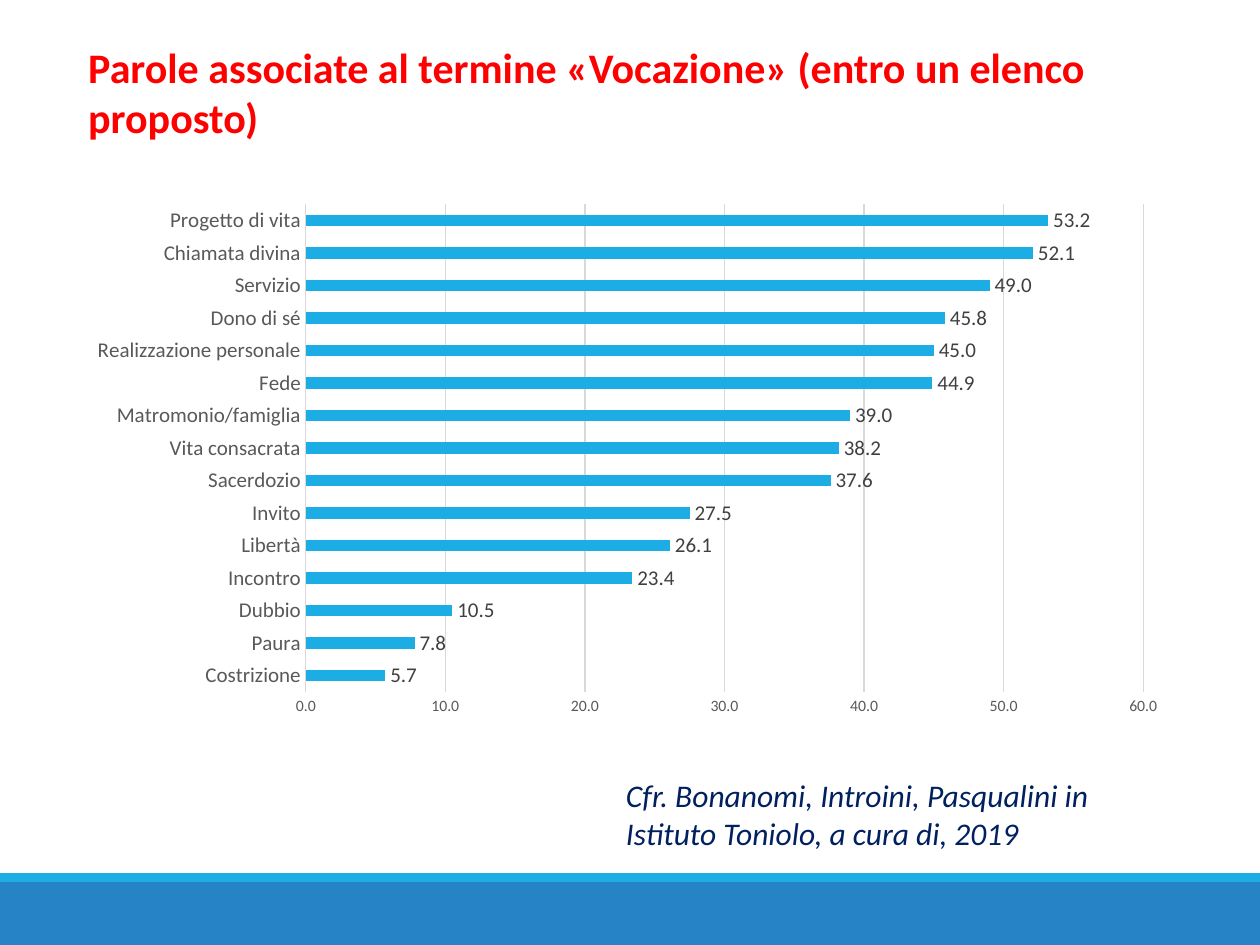
from dataclasses import dataclass

from lxml.etree import SubElement
from pptx import Presentation
from pptx.chart.data import CategoryChartData
from pptx.dml.color import RGBColor
from pptx.enum.chart import XL_CHART_TYPE, XL_LABEL_POSITION, XL_TICK_MARK
from pptx.enum.shapes import MSO_SHAPE
from pptx.enum.text import MSO_ANCHOR, PP_ALIGN
from pptx.oxml.ns import qn
from pptx.util import Inches, Pt

WIDTH, HEIGHT = 10, 7.5


@dataclass(frozen=True)
class Theme:
    font: str = "Calibri"
    title: str = "FF0000"
    citation: str = "002060"
    band: str = "2683C6"
    accent: str = "1CADE4"
    grid: str = "D9D9D9"
    axis_text: str = "595959"
    label_text: str = "404040"
    background: str = "FFFFFF"
    title_size: int = 24
    citation_size: int = 18
    label_size: int = 12
    scale_size: int = 9


THEME = Theme()

# Share of respondents choosing each word, in percent, bottom to top
WORDS = {
    "Costrizione": 5.7,
    "Paura": 7.8,
    "Dubbio": 10.5,
    "Incontro": 23.4,
    "Libertà": 26.1,
    "Invito": 27.5,
    "Sacerdozio": 37.6,
    "Vita consacrata": 38.2,
    "Matromonio/famiglia": 39.0,
    "Fede": 44.9,
    "Realizzazione personale": 45.0,
    "Dono di sé": 45.8,
    "Servizio": 49.0,
    "Chiamata divina": 52.1,
    "Progetto di vita": 53.2,
}


def box(left, top, width, height):
    """Turn shares of the slide's size into lengths."""
    return (Inches(left * WIDTH), Inches(top * HEIGHT),
            Inches(width * WIDTH), Inches(height * HEIGHT))


def rgb(value):
    return RGBColor.from_string(value)


def style_font(font, size, color, bold=False, italic=False):
    font.name = THEME.font
    font.size = Pt(size)
    font.color.rgb = rgb(color)
    font.bold = bold
    font.italic = italic


def write(holder, text, **font_format):
    frame = holder.text_frame
    frame.word_wrap = True
    frame.vertical_anchor = MSO_ANCHOR.TOP
    paragraph = frame.paragraphs[0]
    paragraph.alignment = PP_ALIGN.LEFT
    paragraph.line_spacing = 1.0
    run = paragraph.add_run()
    run.text = text
    style_font(run.font, **font_format)


def add_band(slide, top, height, color):
    band = slide.shapes.add_shape(MSO_SHAPE.RECTANGLE, *box(0, top, 1, height))
    band.shadow.inherit = False
    band.fill.solid()
    band.fill.fore_color.rgb = rgb(color)
    band.line.fill.background()


def add_title(slide, text):
    title = slide.shapes.title
    title.left, title.top, title.width, title.height = box(0.06, 0.037, 0.907, 0.121)
    write(title, text, size=THEME.title_size, color=THEME.title, bold=True)


def add_citation(slide, text):
    citation = slide.shapes.add_textbox(*box(0.487, 0.815, 0.457, 0.095))
    write(citation, text, size=THEME.citation_size, color=THEME.citation, italic=True)


def style_axis(axis, size):
    axis.major_tick_mark = axis.minor_tick_mark = XL_TICK_MARK.NONE
    style_font(axis.tick_labels.font, size, THEME.axis_text)


def style_line(line):
    line.color.rgb = rgb(THEME.grid)
    line.width = Pt(0.75)


def fill_chart_background(chart, color):
    properties = chart.font._element.getparent().getparent().getparent()
    shape = properties.makeelement(qn("c:spPr"))
    fill = SubElement(SubElement(shape, qn("a:solidFill")), qn("a:srgbClr"))
    fill.set("val", color)
    SubElement(SubElement(shape, qn("a:ln")), qn("a:noFill"))
    properties.addprevious(shape)


def add_word_chart(slide, words):
    data = CategoryChartData(number_format="0.0")
    data.categories = list(words)
    data.add_series("Series 1", list(words.values()))
    chart = slide.shapes.add_chart(
        XL_CHART_TYPE.BAR_CLUSTERED, *box(0.06, 0.205, 0.876, 0.563), data).chart
    chart.has_title = False
    chart.has_legend = False
    chart.font.name = THEME.font
    chart.font.size = Pt(10)
    fill_chart_background(chart, THEME.background)

    # Axes
    style_axis(chart.category_axis, THEME.label_size)
    style_line(chart.category_axis.format.line)
    scale = chart.value_axis
    style_axis(scale, THEME.scale_size)
    scale.minimum_scale, scale.maximum_scale, scale.major_unit = 0, 60, 10
    scale.tick_labels.number_format = "0.0"
    scale.tick_labels.number_format_is_linked = False
    scale.format.line.fill.background()
    style_line(scale.major_gridlines.format.line)

    # Bars and their values
    plot = chart.plots[0]
    plot.gap_width = 182
    plot.vary_by_categories = False
    bars = plot.series[0]
    bars.format.fill.solid()
    bars.format.fill.fore_color.rgb = rgb(THEME.accent)
    labels = bars.data_labels
    labels.show_value = True
    labels.position = XL_LABEL_POSITION.OUTSIDE_END
    labels.number_format = "0.0"
    labels.number_format_is_linked = False
    style_font(labels.font, THEME.label_size, THEME.label_text)


def main():
    deck = Presentation()
    deck.slide_width, deck.slide_height = Inches(WIDTH), Inches(HEIGHT)
    slide = deck.slides.add_slide(deck.slide_layouts[5])

    # Footer bands
    add_band(slide, 7 / HEIGHT, 0.5 / HEIGHT, THEME.band)
    add_band(slide, 6.93 / HEIGHT, 0.07 / HEIGHT, THEME.accent)

    # Content
    add_word_chart(slide, WORDS)
    add_title(slide, "Parole associate al termine «Vocazione» (entro un elenco proposto)")
    add_citation(slide, "Cfr. Bonanomi, Introini, Pasqualini in Istituto Toniolo, a cura di, 2019")
    deck.save("out.pptx")


if __name__ == "__main__":
    main()
